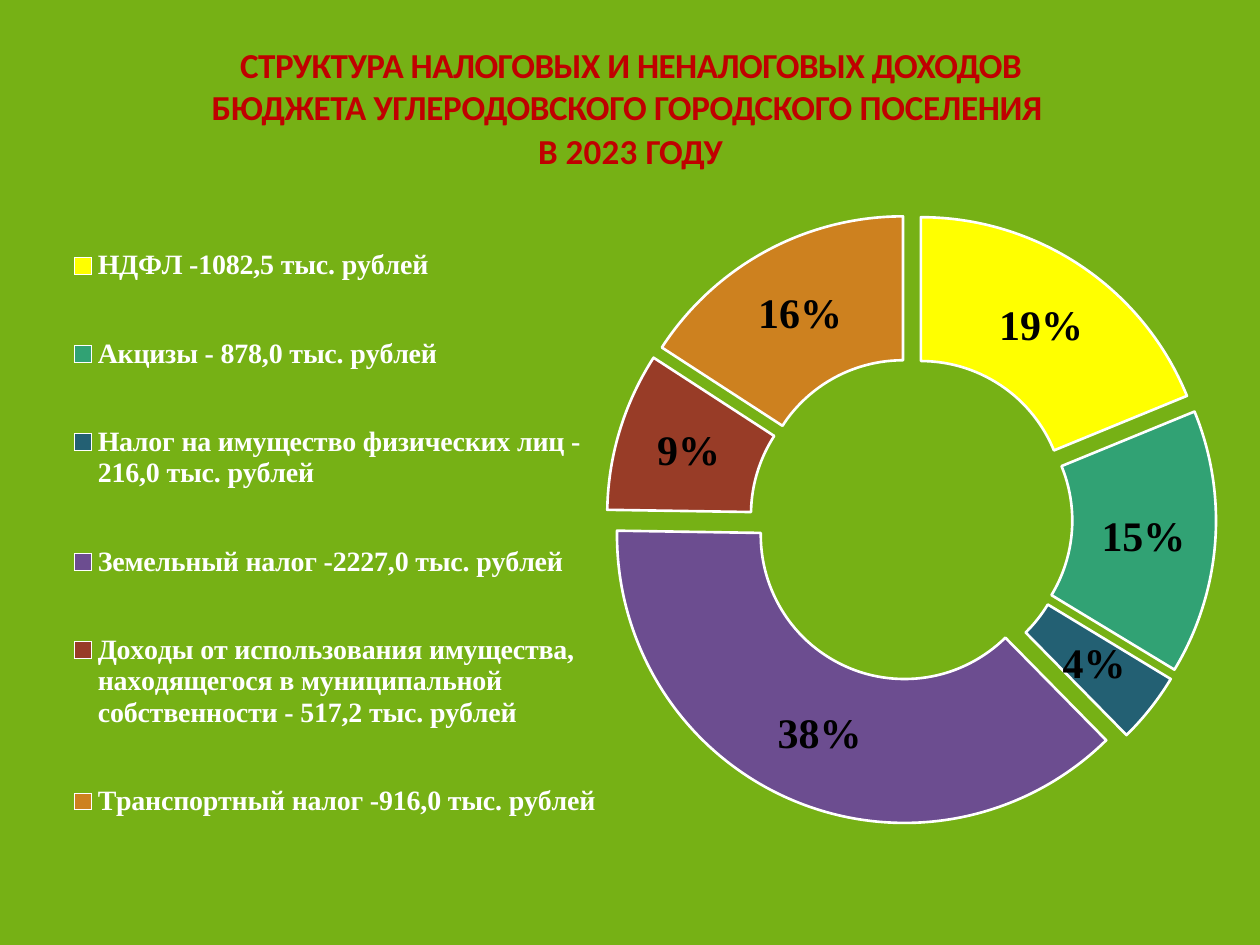
from lxml import etree
from pptx import Presentation
from pptx.chart.data import CategoryChartData
from pptx.dml.color import RGBColor
from pptx.enum.chart import XL_CHART_TYPE, XL_LEGEND_POSITION
from pptx.enum.shapes import MSO_SHAPE
from pptx.enum.text import MSO_ANCHOR, PP_ALIGN
from pptx.oxml.ns import qn
from pptx.util import Pt

DOUGHNUT = XL_CHART_TYPE.DOUGHNUT
LEGEND_BOTTOM = XL_LEGEND_POSITION.BOTTOM
RECTANGLE = MSO_SHAPE.RECTANGLE
TOP = MSO_ANCHOR.TOP
CENTER = PP_ALIGN.CENTER

GREEN = RGBColor(0x76, 0xB1, 0x15)
RED = RGBColor(0xC0, 0x00, 0x00)
WHITE = RGBColor(0xFF, 0xFF, 0xFF)
BLACK = RGBColor(0x00, 0x00, 0x00)

SLIDE_WIDTH, SLIDE_HEIGHT = Pt(720), Pt(540)
TITLE_FONT = "Calibri"
CHART_FONT = "Quicksand"
LABEL_FONT = "Times New Roman"

# Each run is its text and its letter spacing in hundredths of a point.
TITLE = [
    [("СТРУКТУРА НАЛОГОВЫХ И НЕНАЛОГОВЫХ ДОХОДОВ ", -30),
     ("БЮДЖЕТА УГЛЕРОДОВСКОГО ГОРОДСКОГО ПОСЕЛЕНИЯ ", -20)],
    [("В ", 0), ("2023 ", 10), ("ГОДУ", -40)],
]
# Income source, share, sector colour
INCOME = [
    ("НДФЛ -1082,5 тыс. рублей", 19, RGBColor(0xFF, 0xFF, 0x00)),
    ("Акцизы - 878,0 тыс. рублей", 15, RGBColor(0x31, 0xA2, 0x74)),
    ("Налог на имущество физических лиц - 216,0 тыс. рублей", 4,
     RGBColor(0x23, 0x60, 0x73)),
    ("Земельный налог -2227,0 тыс. рублей", 38, RGBColor(0x6C, 0x4D, 0x90)),
    ("Доходы от использования имущества, находящегося в муниципальной "
     "собственности - 517,2 тыс. рублей", 9, RGBColor(0x98, 0x3C, 0x27)),
    ("Транспортный налог -916,0 тыс. рублей", 16, RGBColor(0xCD, 0x81, 0x1F)),
]


def style_font(font, name, size, color, bold=False):
    font.name = name
    font.size = Pt(size)
    font.bold = bold
    font.color.rgb = color


def add_backdrop(slide):
    """Cover the slide with green, behind the title."""
    backdrop = slide.shapes.add_shape(RECTANGLE, 0, 0, SLIDE_WIDTH, SLIDE_HEIGHT)
    backdrop.shadow.inherit = False
    backdrop.fill.solid()
    backdrop.fill.fore_color.rgb = GREEN
    backdrop.line.fill.background()
    slide.shapes.title.element.addprevious(backdrop.element)


def fill_title(title):
    title.left, title.top = Pt(98.6), Pt(23.8)
    title.width, title.height = Pt(523.4), Pt(75)
    frame = title.text_frame
    frame.word_wrap = True
    frame.vertical_anchor = TOP
    frame.margin_left = frame.margin_right = frame.margin_bottom = 0
    frame.margin_top = Pt(1)
    for index, runs in enumerate(TITLE):
        paragraph = frame.add_paragraph() if index else frame.paragraphs[0]
        paragraph.alignment = CENTER
        paragraph.line_spacing = 1
        paragraph.space_before = Pt(1 if index else 0)
        for text, spacing in runs:
            run = paragraph.add_run()
            run.text = text
            style_font(run.font, TITLE_FONT, 20, RED, bold=True)
            run.font._element.set("spc", str(spacing))


def make_layout(x, y, w, h, inner=False):
    """Return a manual layout given in fractions of the chart area."""
    layout = etree.Element(qn("c:layout"))
    manual = etree.SubElement(layout, qn("c:manualLayout"))
    settings = [("layoutTarget", "inner")] if inner else []
    settings += [("xMode", "edge"), ("yMode", "edge"),
                 ("x", x), ("y", y), ("w", w), ("h", h)]
    for tag, value in settings:
        etree.SubElement(manual, qn(f"c:{tag}")).set("val", str(value))
    return layout


def place_plot(chart):
    plot_area = chart.element.find(".//" + qn("c:plotArea"))
    for default_layout in plot_area.findall(qn("c:layout")):
        plot_area.remove(default_layout)
    plot_area.insert(0, make_layout(0.481, 0.029, 0.519, 0.893, inner=True))
    plot_area.find(".//" + qn("c:holeSize")).set("val", "61")


def add_legend(chart):
    chart.has_legend = True
    legend = chart.legend
    legend.position = LEGEND_BOTTOM
    legend.include_in_layout = False
    style_font(legend.font, LABEL_FONT, 16, WHITE, bold=True)
    for default_layout in legend._element.findall(qn("c:layout")):
        legend._element.remove(default_layout)
    position = legend._element.find(qn("c:legendPos"))
    position.addnext(make_layout(0.02, 0.03, 0.46, 0.93))


def color_sectors(series):
    outline = series.format.line
    outline.color.rgb = WHITE
    outline.width = Pt(1.5)
    explosion = etree.Element(qn("c:explosion"))
    explosion.set("val", "12")
    series._element.find(qn("c:spPr")).addnext(explosion)
    for index, (_, _, color) in enumerate(INCOME):
        sector = series.points[index].format
        sector.fill.solid()
        sector.fill.fore_color.rgb = color
        sector.line.color.rgb = WHITE
        sector.line.width = Pt(1.5)


def add_income_chart(slide):
    data = CategoryChartData()
    data.categories = [source for source, _, _ in INCOME]
    data.add_series("Series 1", [share for _, share, _ in INCOME])
    chart = slide.shapes.add_chart(
        DOUGHNUT, Pt(23.8), Pt(97.9), Pt(671.8), Pt(418.3), data).chart
    chart.has_title = False
    style_font(chart.font, CHART_FONT, 10, WHITE)
    place_plot(chart)
    add_legend(chart)

    plot = chart.plots[0]
    plot.vary_by_categories = True
    color_sectors(plot.series[0])
    labels = plot.series[0].data_labels
    labels.show_percentage = True
    labels.show_value = False
    labels.number_format = "0%"
    labels.number_format_is_linked = False
    style_font(labels.font, LABEL_FONT, 24, BLACK, bold=True)


def main():
    presentation = Presentation()
    presentation.slide_width = SLIDE_WIDTH
    presentation.slide_height = SLIDE_HEIGHT
    slide = presentation.slides.add_slide(presentation.slide_layouts[5])
    add_backdrop(slide)
    fill_title(slide.shapes.title)
    add_income_chart(slide)
    presentation.save("out.pptx")


if __name__ == "__main__":
    main()
